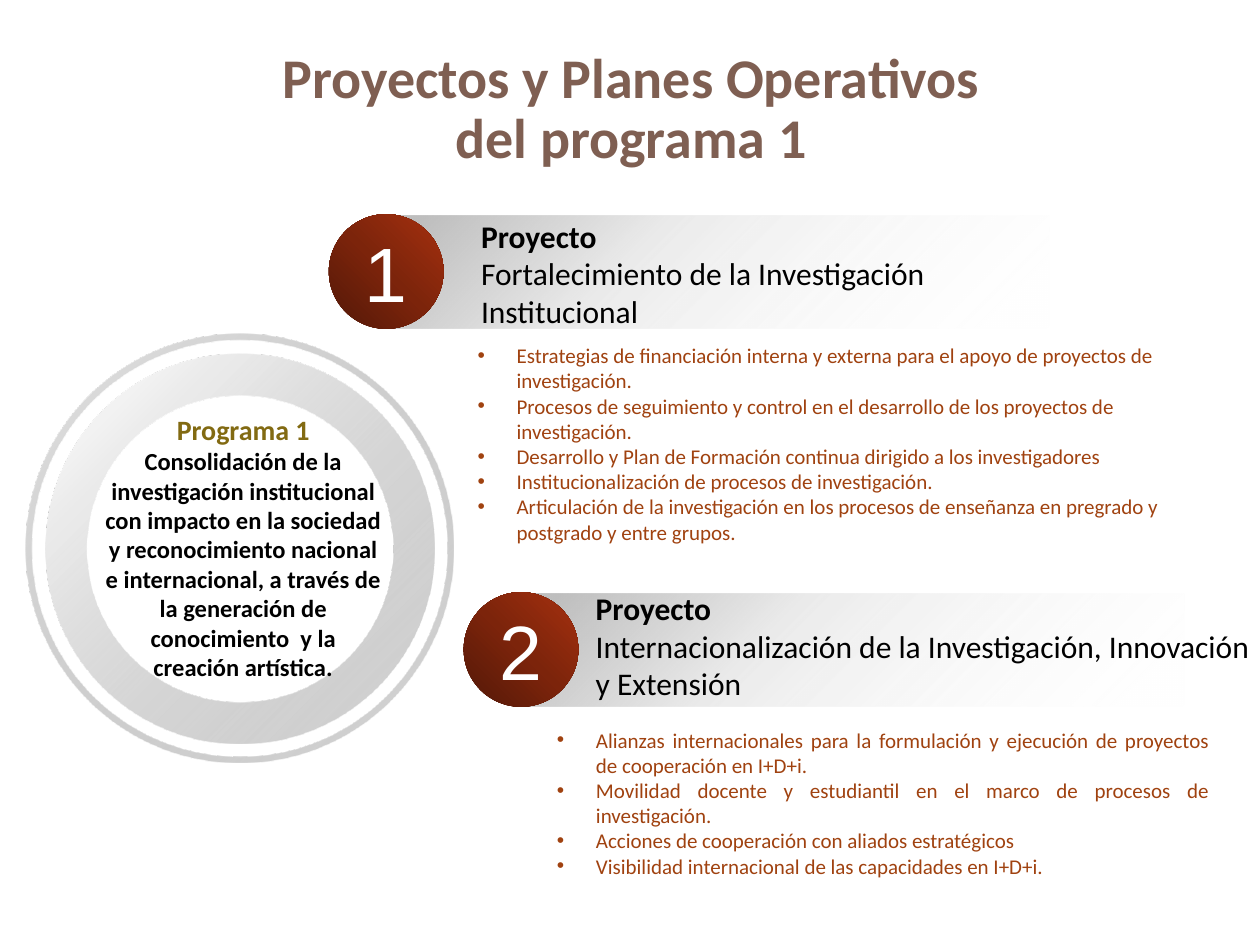
from dataclasses import dataclass

from lxml import etree
from pptx import Presentation
from pptx.dml.color import RGBColor
from pptx.enum.shapes import MSO_SHAPE
from pptx.enum.text import MSO_ANCHOR, MSO_AUTO_SIZE, PP_ALIGN
from pptx.oxml.ns import qn
from pptx.util import Inches, Pt

RECT, OVAL, DONUT = MSO_SHAPE.RECTANGLE, MSO_SHAPE.OVAL, MSO_SHAPE.DONUT
LEFT, CENTER, JUSTIFY = PP_ALIGN.LEFT, PP_ALIGN.CENTER, PP_ALIGN.JUSTIFY
MIDDLE, TOP = MSO_ANCHOR.MIDDLE, MSO_ANCHOR.TOP
NO_FIT = MSO_AUTO_SIZE.NONE
TWO_CONTENT = 3


@dataclass(frozen=True)
class Theme:
    font: str = "Calibri"
    number_font: str = "Arial"
    title: str = "7F5F52"
    text: str = "000000"
    number: str = "FFFFFF"
    program: str = "826A12"
    plan: str = "A04210"
    title_size: int = 32
    number_size: int = 44
    project_size: int = 18
    program_size: int = 16
    goal_size: int = 14
    plan_size: int = 12
    # Gradients: angle, then (position, colour, opacity) in percent
    bar: tuple = (45, (5, "BFBFBF", 100), (37, "BFBFBF", 31), (100, "FFFFFF", 0))
    badge: tuple = (315, (0, "521808", 100), (50, "7C240B", 100), (100, "A5300F", 100))
    ring: tuple = (45, (16, "F2F2F2", 100), (87, "A6A6A6", 52))
    rim: tuple = (45, (16, "D9D9D9", 100), (87, "A6A6A6", 52))


T = Theme()


def part(box, x, y, w, h):
    """Box given as shares of an outer box, in inches."""
    left, top, width, height = box
    return left + x * width, top + y * height, w * width, h * height


def place(sp, box):
    sp.left, sp.top, sp.width, sp.height = map(Inches, box)


def write(p, text, size, color, font=T.font, bold=False, align=LEFT):
    """Fill a paragraph; a newline in the text is a line break."""
    p.alignment = align
    p.space_before = Pt(0)
    for i, line in enumerate(text.split("\n")):
        if i:
            p.add_line_break()
        r = p.add_run()
        r.text = line
        r.font.name, r.font.size, r.font.bold = font, Pt(size), bold
        r.font.color.rgb = RGBColor.from_string(color)


def write_all(tf, lines, **fmt):
    """Each line is a text with its own format; fmt is common to all."""
    for i, (text, own) in enumerate(lines):
        p = tf.add_paragraph() if i else tf.paragraphs[0]
        write(p, text, **{**fmt, **own})


def text_box(shapes, box, lines, **fmt):
    tf = shapes.add_textbox(*map(Inches, box)).text_frame
    tf.word_wrap = True
    tf.vertical_anchor = MIDDLE
    write_all(tf, lines, **fmt)


def gradient_shape(shapes, kind, box, gradient):
    sp = shapes.add_shape(kind, *map(Inches, box))
    sp.shadow.inherit = False
    sp.line.fill.background()
    sp.fill.gradient()
    angle, *stops = gradient
    grad = sp._element.spPr.find(qn("a:gradFill"))
    for child in list(grad):
        grad.remove(child)
    gs_list = etree.SubElement(grad, qn("a:gsLst"))
    for pos, color, opacity in stops:
        gs = etree.SubElement(gs_list, qn("a:gs"), pos=str(pos * 1000))
        clr = etree.SubElement(gs, qn("a:srgbClr"), val=color)
        if opacity < 100:
            etree.SubElement(clr, qn("a:alpha"), val=str(opacity * 1000))
    etree.SubElement(grad, qn("a:lin"), ang=str(angle * 60000), scaled="0")
    return sp


def add_title(slide, box, text):
    title = slide.shapes.title
    place(title, box)
    tf = title.text_frame
    tf.auto_size = NO_FIT
    tf.vertical_anchor = MIDDLE
    tf.margin_bottom = Inches(0.54)
    p = tf.paragraphs[0]
    write(p, text, T.title_size, T.title, bold=True, align=CENTER)
    p.line_spacing = 0.9


def add_program(slide, box, name, goal):
    shapes = slide.shapes.add_group_shape().shapes
    # Rings
    ring_box = part(box, 0.047, 0.047, 0.908, 0.908)
    for ring, gradient, band in ((ring_box, T.ring, 0.107), (box, T.rim, 0.015)):
        gradient_shape(shapes, DONUT, ring, gradient).adjustments[0] = band
    # Goal inside the rings
    text_box(shapes, part(box, 0.157, 0.165, 0.704, 0.665),
             [(name, dict(size=T.program_size, color=T.program)),
              (goal, dict(size=T.goal_size, color=T.text))],
             bold=True, align=CENTER)


def add_project(slide, box, number, names, text_share):
    shapes = slide.shapes.add_group_shape().shapes
    # Fading bar and its heading
    gradient_shape(shapes, RECT, part(box, 0.082, 0.01, 0.918, 0.99), T.bar)
    text_box(shapes, part(box, *text_share),
             [("Proyecto", dict(bold=True))] + [(name, {}) for name in names],
             size=T.project_size, color=T.text)
    # Number badge, as wide as the box is high
    left, top, _, height = box
    badge = gradient_shape(shapes, OVAL, (left, top, height, height), T.badge)
    tf = badge.text_frame
    tf.vertical_anchor = MIDDLE
    tf.margin_left = tf.margin_right = Inches(0.08)
    tf.margin_top = tf.margin_bottom = Inches(0.1)
    write(tf.paragraphs[0], number, T.number_size, T.number,
          font=T.number_font, align=CENTER)


def add_plans(body, box, plans, align=LEFT):
    place(body, box)
    tf = body.text_frame
    tf.auto_size = NO_FIT
    tf.vertical_anchor = TOP
    write_all(tf, [(plan, {}) for plan in plans],
              size=T.plan_size, color=T.plan, align=align)
    # Hanging bullets
    indent = Inches(0.31)
    for p in tf.paragraphs:
        pPr = p._p.get_or_add_pPr()
        pPr.set("marL", str(indent))
        pPr.set("indent", str(-indent))
        etree.SubElement(pPr, qn("a:buFont"), typeface="Arial")
        etree.SubElement(pPr, qn("a:buChar"), char="•")


def main():
    prs = Presentation()
    prs.slide_width, prs.slide_height = Inches(10), Inches(7.5)
    slide = prs.slides.add_slide(prs.slide_layouts[TWO_CONTENT])
    _, first, second = slide.placeholders

    add_title(slide, (0.51, 0.71, 9, 0.82),
              "Proyectos y Planes Operativos\ndel programa 1")
    add_project(slide, (2.61, 1.7, 5.72, 0.91), "1",
                ["Fortalecimiento de la Investigación Institucional"],
                (0.194, -0.04, 0.815, 1.11))
    add_project(slide, (3.68, 4.7, 5.72, 0.91), "2",
                ["Internacionalización de la Investigación, Innovación",
                 "y Extensión"],
                (0.166, -0.09, 1.012, 1.11))
    add_program(slide, (0.2, 2.65, 3.4, 3.4), "Programa 1",
                "Consolidación de la investigación institucional con impacto en "
                "la sociedad y reconocimiento nacional e internacional, a través "
                "de la generación de conocimiento  y la creación artística.")
    add_plans(first, (3.69, 2.67, 5.82, 1.72), [
        "Estrategias de financiación interna y externa para el apoyo de "
        "proyectos de investigación.",
        "Procesos de seguimiento y control en el desarrollo de los proyectos "
        "de investigación.",
        "Desarrollo y Plan de Formación continua dirigido a los investigadores",
        "Institucionalización de procesos de investigación.",
        "Articulación de la investigación en los procesos de enseñanza en "
        "pregrado y postgrado y entre grupos."])
    add_plans(second, (4.32, 5.72, 5.38, 1.31), [
        "Alianzas internacionales para la formulación y ejecución de proyectos "
        "de cooperación en I+D+i.",
        "Movilidad docente y estudiantil en el marco de procesos de "
        "investigación.",
        "Acciones de cooperación con aliados estratégicos",
        "Visibilidad internacional de las capacidades en I+D+i."], JUSTIFY)
    prs.save("out.pptx")


if __name__ == "__main__":
    main()
